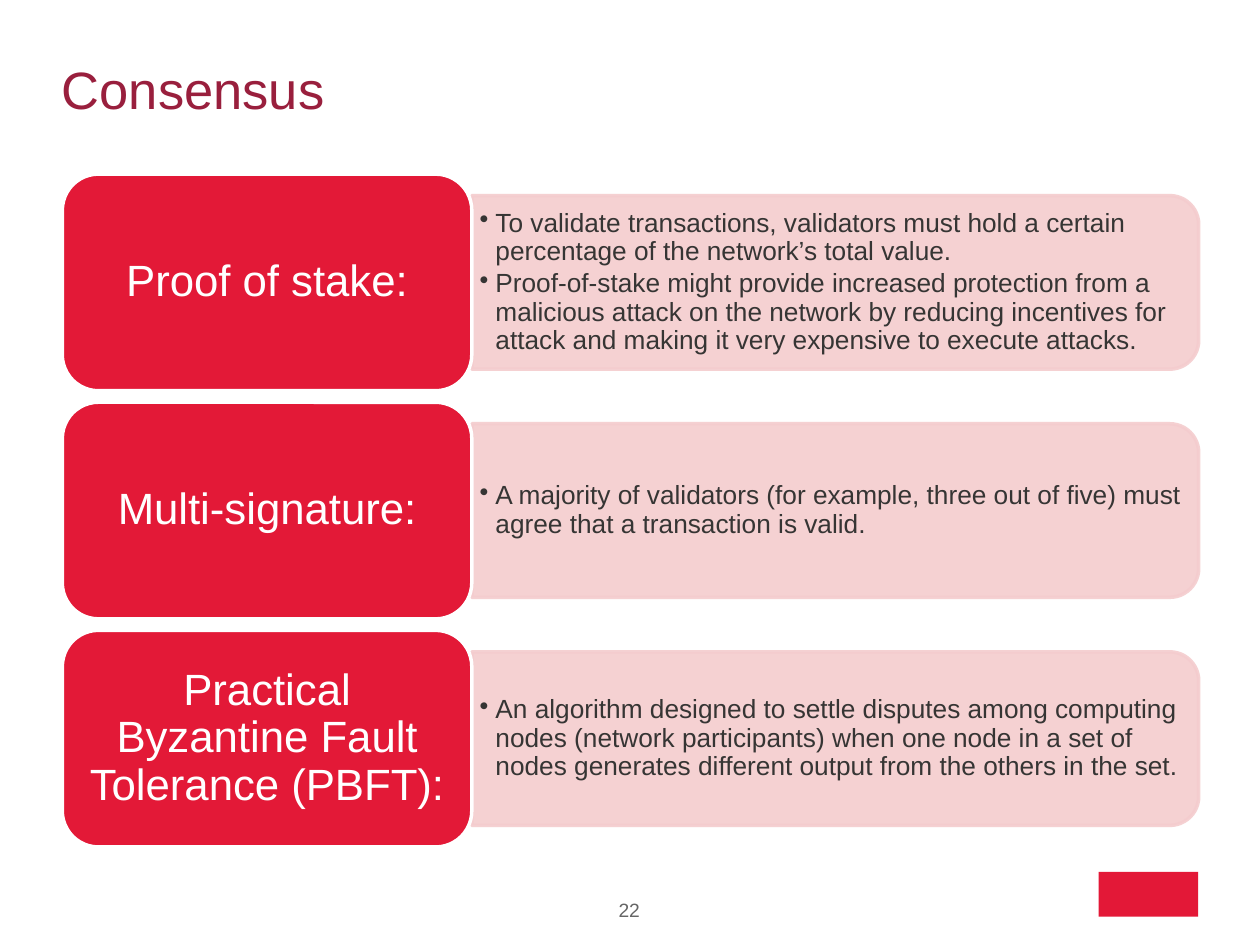
from pptx import Presentation
from pptx.dml.color import RGBColor
from pptx.enum.shapes import MSO_SHAPE
from pptx.enum.text import MSO_ANCHOR, PP_ALIGN
from pptx.util import Pt
from lxml.etree import SubElement
from pptx.oxml.ns import qn


def color(code):
    return RGBColor.from_string(code)


def write(text, box, size, tint, align=PP_ALIGN.LEFT, anchor=MSO_ANCHOR.MIDDLE,
          inset=(0, 0), line=1, after=0, bullet=False, wrap=True):
    """Add a text box; each line of text becomes a paragraph."""
    frame = slide.shapes.add_textbox(*map(Pt, box)).text_frame
    frame.word_wrap = wrap
    frame.vertical_anchor = anchor
    frame.margin_left = frame.margin_right = Pt(inset[0])
    frame.margin_top = frame.margin_bottom = Pt(inset[1])
    frame.text = text
    for para in frame.paragraphs:
        para.alignment = align
        para.line_spacing = line
        para.space_after = Pt(after)
        if bullet:
            props = para._p.get_or_add_pPr()
            props.set("marL", str(Pt(9)))
            props.set("indent", str(Pt(-9)))
            SubElement(props, qn("a:buChar"), char="•")
        for run in para.runs:
            run.font.name = "Arial"
            run.font.size = Pt(size)
            run.font.color.rgb = color(tint)


def draw(kind, box, fill, edge=None, alpha=None):
    """Add a filled shape, with an outline and opacity if given."""
    shape = slide.shapes.add_shape(kind, *map(Pt, box))
    shape.shadow.inherit = False
    shape.fill.solid()
    shape.fill.fore_color.rgb = color(fill)
    if edge:
        shape.line.color.rgb = color(edge)
        shape.line.width = Pt(2)
    else:
        shape.line.fill.background()
    if alpha:
        for tone in shape._element.spPr.iter(qn("a:srgbClr")):
            SubElement(tone, qn("a:alpha"), val=str(alpha * 1000))
    return shape


deck = Presentation()
deck.slide_width, deck.slide_height = Pt(720), Pt(540)
slide = deck.slides.add_slide(deck.slide_layouts[6])

# Plain block in the corner
draw(MSO_SHAPE.RECTANGLE, (627.8, 498.2, 56.9, 25.6), "E31837")

# Title
write("Consensus", (35.3, 14.4, 648.7, 72.7), 30, "991F3D")

# Rows: label and points
rows = [
    ("Proof of stake:",
     "To validate transactions, validators must hold a certain percentage of "
     "the network’s total value.\n"
     "Proof-of-stake might provide increased protection from a malicious attack "
     "on the network by reducing incentives for attack and making it very "
     "expensive to execute attacks."),
    ("Multi-signature:",
     "A majority of validators (for example, three out of five) must agree that "
     "a transaction is valid."),
    ("Practical Byzantine Fault Tolerance (PBFT):",
     "An algorithm designed to settle disputes among computing nodes (network "
     "participants) when one node in a set of nodes generates different output "
     "from the others in the set."),
]
left, top, wide, high, step = 35.6, 99.5, 234, 123.8, 130.35
deep, span = 99.2, 415.4
for i, (label, points) in enumerate(rows):
    y = top + i * step
    mid = y + high / 2

    # Pale panel, a tall shape turned on its side
    x = left + wide + (span - deep) / 2
    panel = draw(MSO_SHAPE.ROUND_2_SAME_RECTANGLE, (x, mid - span / 2, deep, span),
                 "F4CCCE", edge="F4CCCE", alpha=90)
    panel.rotation = 90
    write(points, (left + wide, mid - 44.8, 411, 89.6), 15, "363534",
          inset=(4.5, 2.25), line=0.9, after=2.2, bullet=True)

    # Red tile
    draw(MSO_SHAPE.ROUNDED_RECTANGLE, (left, y, wide, high), "E31937", edge="FFFFFF")
    write(label, (left + 6, y + 6, wide - 12, high - 12), 25, "FFFFFF",
          align=PP_ALIGN.CENTER, inset=(7.5, 3.75), line=0.9)

# Page number
write("22", (329, 513.4, 61.2, 18.7), 11, "666666", align=PP_ALIGN.CENTER,
      anchor=MSO_ANCHOR.TOP, wrap=False)

deck.save("out.pptx")
